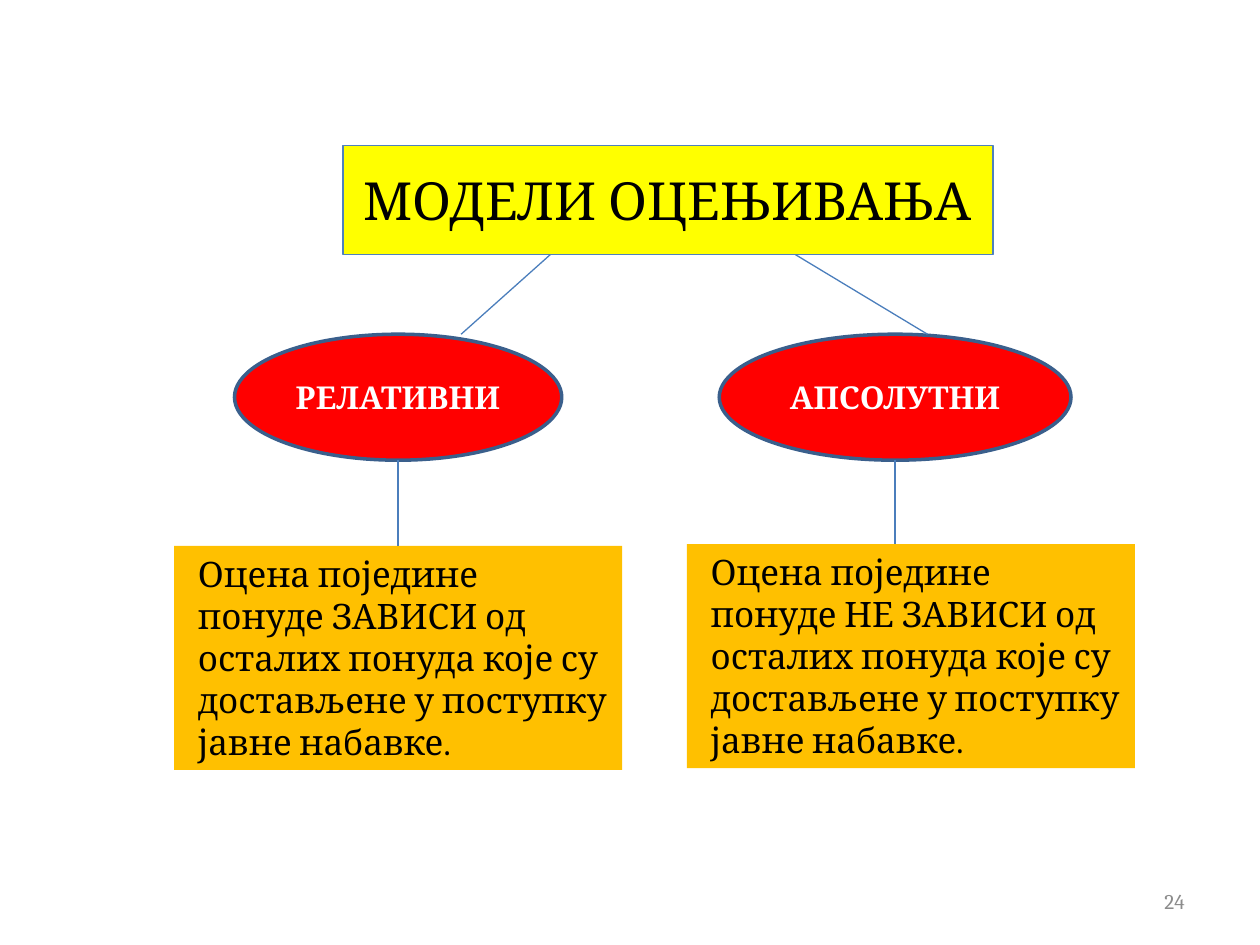
from dataclasses import dataclass

from lxml import etree
from pptx import Presentation
from pptx import util as u
from pptx.dml.color import RGBColor
from pptx.enum import shapes, text
from pptx.oxml import ns

FONT = "Cambria"
LINE = "4B7EBC"
RECT, OVAL = shapes.MSO_SHAPE.RECTANGLE, shapes.MSO_SHAPE.OVAL
LEFT, CENTER, RIGHT = text.PP_ALIGN.LEFT, text.PP_ALIGN.CENTER, text.PP_ALIGN.RIGHT


@dataclass
class Style:
    size: float
    color: str
    bold: bool = False
    align: int = CENTER
    indent: float = 0


@dataclass
class Node:
    kind: int
    x: float
    y: float
    w: float
    h: float
    label: str
    style: Style
    fill: str
    line: str = ""
    line_width: float = 0


@dataclass
class Branch:
    model: Node
    description: Node
    title_x: float  # where the branch leaves the title
    model_x: float  # where it meets the model


def rgb(value: str) -> RGBColor:
    return RGBColor.from_string(value)


def write(tf, label: str, style: Style) -> None:
    tf.word_wrap = True
    tf.text = label
    p = tf.paragraphs[0]
    p.alignment = style.align
    if style.indent:
        p._p.get_or_add_pPr().set("marL", str(u.Pt(style.indent)))
    r = p.runs[0]
    r.font.name, r.font.size, r.font.bold = FONT, u.Pt(style.size), style.bold
    r.font.color.rgb = rgb(style.color)


def draw_node(s, n: Node):
    sp = s.shapes.add_shape(n.kind, u.Pt(n.x), u.Pt(n.y), u.Pt(n.w), u.Pt(n.h))
    sp.shadow.inherit = False
    sp.fill.solid()
    sp.fill.fore_color.rgb = rgb(n.fill)
    if n.line:
        sp.line.color.rgb = rgb(n.line)
        sp.line.width = u.Pt(n.line_width)
    else:
        sp.line.fill.background()
    tf = sp.text_frame
    write(tf, n.label, n.style)
    if n.style.align == LEFT:
        tf.vertical_anchor = text.MSO_ANCHOR.TOP
        tf.auto_size = text.MSO_AUTO_SIZE.SHAPE_TO_FIT_TEXT
    else:
        tf.vertical_anchor = text.MSO_ANCHOR.MIDDLE
    return sp


def draw_line(s, x1: float, y1: float, x2: float, y2: float):
    c = s.shapes.add_connector(shapes.MSO_CONNECTOR.STRAIGHT,
                               u.Pt(x1), u.Pt(y1), u.Pt(x2), u.Pt(y2))
    c.line.color.rgb = rgb(LINE)
    c.line.width = u.Pt(0.75)
    etree.SubElement(c._element.spPr, ns.qn("a:effectLst"))
    return c


def model(x: float, w: float, label: str) -> Node:
    return Node(OVAL, x, 191, w, 72, label, Style(18, "FFFFFF", bold=True),
                "FF0000", "3A5F8C", 2)


def description(x: float, y: float, verb: str) -> Node:
    label = (f"Оцена поједине понуде {verb} од осталих понуда које су "
             "достављене у поступку јавне набавке.")
    return Node(RECT, x, y, 256, 128, label,
                Style(20, "000000", align=LEFT, indent=6.5), "FFC000")


def draw_branch(s, title: Node, b: Branch) -> None:
    m, d = b.model, b.description
    draw_node(s, m)
    box = draw_node(s, d)
    draw_line(s, b.title_x, title.y + title.h, b.model_x, m.y)
    middle = m.x + m.w / 2
    c = draw_line(s, middle, m.y + m.h, middle, d.y)
    if middle == d.x + d.w / 2:
        c.end_connect(box, 0)


def main() -> None:
    prs = Presentation()
    prs.slide_width, prs.slide_height = u.Pt(720), u.Pt(540)
    s = prs.slides.add_slide(prs.slide_layouts[6])

    # Title
    title = Node(RECT, 196, 83, 371.5, 62.5, "МОДЕЛИ ОЦЕЊИВАЊА",
                 Style(30, "000000"), "FFFF00", "4F81BD", 0.75)
    draw_node(s, title)

    # Relative and absolute models
    branches = [
        Branch(model(134, 187, "РЕЛАТИВНИ"),
               description(99.5, 312, "ЗАВИСИ"), 314.5, 263.5),
        Branch(model(411, 201, "АПСОЛУТНИ"),
               description(392.5, 311, "НЕ ЗАВИСИ"), 454.5, 530),
    ]
    for b in branches:
        draw_branch(s, title, b)

    # Slide number
    number = s.shapes.add_textbox(u.Pt(516), u.Pt(500.5), u.Pt(168), u.Pt(29))
    write(number.text_frame, "24", Style(12, "8C8C8C", align=RIGHT))
    number.text_frame.vertical_anchor = text.MSO_ANCHOR.MIDDLE

    prs.save("out.pptx")


if __name__ == "__main__":
    main()
